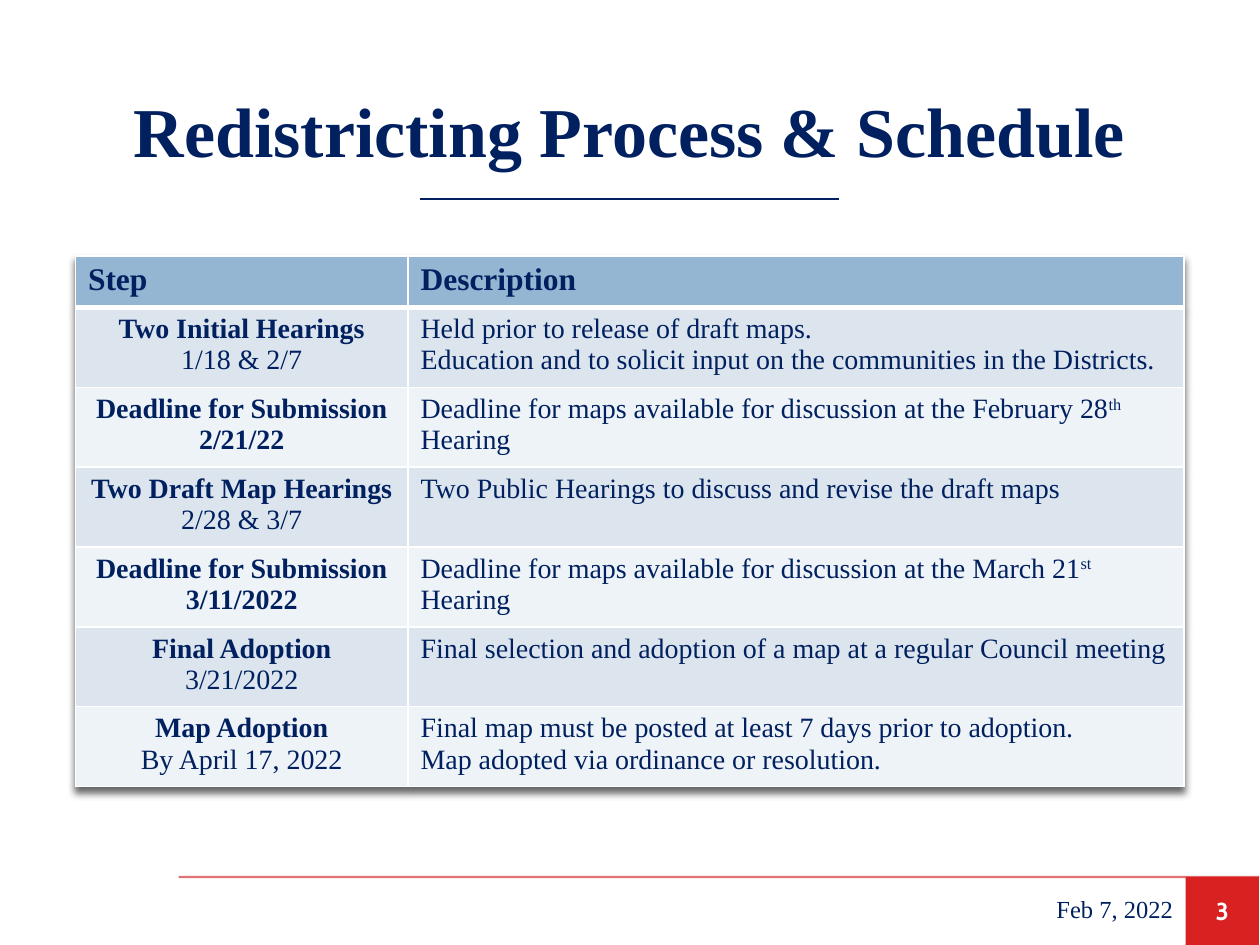
import pptx
import pptx.util
import pptx.dml.color
import pptx.enum.shapes
import pptx.enum.text
import pptx.oxml
import pptx.oxml.ns
import lxml.etree

Cm = pptx.util.Cm
Pt = pptx.util.Pt
RGB = pptx.dml.color.RGBColor
ALIGN = pptx.enum.text.PP_ALIGN
MID = pptx.enum.text.MSO_ANCHOR.MIDDLE
qn = pptx.oxml.ns.qn

NAVY = RGB(0x00, 0x20, 0x60)
WHITE = RGB(0xFF, 0xFF, 0xFF)
RED = RGB(0xD9, 0x21, 0x21)
RULE = RGB(0xC8, 0x00, 0x00)
HEAD = RGB(0x94, 0xB6, 0xD2)
BANDS = [RGB(0xDC, 0xE5, 0xEE), RGB(0xEE, 0xF3, 0xF7)]
SERIF = "Times New Roman"

STEPS = [
    ("Two Initial Hearings", "1/18 & 2/7", False,
     [["Held prior to release of draft maps."],
      ["Education and to solicit input on the communities in the Districts."]]),
    ("Deadline for Submission", "2/21/22", True,
     [["Deadline for maps available for discussion at the February 28", "th", " Hearing"]]),
    ("Two Draft Map Hearings", "2/28 & 3/7", False,
     [["Two Public Hearings to discuss and revise the draft maps"]]),
    ("Deadline for Submission", "3/11/2022", True,
     [["Deadline for maps available for discussion at the March 21", "st", " Hearing"]]),
    ("Final Adoption", "3/21/2022", False,
     [["Final selection and adoption of a map at a regular Council meeting"]]),
    ("Map Adoption", "By April 17, 2022", False,
     [["Final map must be posted at least 7 days prior to adoption."],
      ["Map adopted via ordinance or resolution."]]),
]


def add_run(para, text, size, bold=False, color=NAVY, face=SERIF):
    run = para.add_run()
    run.text = text
    font = run.font
    font.size, font.bold, font.name = Pt(size), bold, face
    font.color.rgb = color
    return run


def add_para(frame, first, align):
    para = frame.paragraphs[0] if first else frame.add_paragraph()
    para.alignment = align
    return para


def add_rule(slide, left, top, width, color, weight):
    line = slide.shapes.add_connector(
        pptx.enum.shapes.MSO_CONNECTOR.STRAIGHT,
        Cm(left), Cm(top), Cm(left + width), Cm(top))
    line.line.color.rgb = color
    line.line.width = Pt(weight)
    lxml.etree.SubElement(line._element.spPr, qn("a:effectLst"))
    return line


def add_title(slide, left, top, width, height):
    title = slide.shapes.title
    title.left, title.top, title.width, title.height = map(Cm, (left, top, width, height))
    frame = title.text_frame
    frame.word_wrap = True
    frame.vertical_anchor = MID
    add_run(add_para(frame, True, ALIGN.CENTER), "Redistricting Process & Schedule", 40, True)
    add_rule(slide, left + 7.52, top + height + 0.03, 8.46, NAVY, 0.75)


def style_cell(cell, color, top, base):
    props = cell._tc.get_or_add_tcPr()
    for side, weight in (("L", 1), ("R", 1), ("T", top), ("B", base)):
        edge = lxml.etree.SubElement(props, qn("a:ln" + side), w=str(Pt(weight)))
        fill = lxml.etree.SubElement(edge, qn("a:solidFill"))
        lxml.etree.SubElement(fill, qn("a:srgbClr"), val=str(WHITE))
    cell.fill.solid()
    cell.fill.fore_color.rgb = color


def add_shade(table):
    props = table._tbl.tblPr
    list_ = lxml.etree.Element(qn("a:effectLst"))
    shade = lxml.etree.SubElement(list_, qn("a:outerShdw"), blurRad="50800",
                                  dist="38100", dir="5400000", rotWithShape="0")
    tint = lxml.etree.SubElement(shade, qn("a:srgbClr"), val="000000")
    lxml.etree.SubElement(tint, qn("a:alpha"), val="60000")
    props.insert(0, list_)


def add_steps(slide, left, top, width, height):
    table = slide.shapes.add_table(len(STEPS) + 1, 2, Cm(left), Cm(top),
                                   Cm(width), Cm(height)).table
    add_shade(table)
    for col, part in zip(table.columns, (0.3, 0.7)):
        col.width = Cm(width * part)
    head = 1.04
    table.rows[0].height = Cm(head)
    for col, text in enumerate(("Step", "Description")):
        cell = table.cell(0, col)
        style_cell(cell, HEAD, 1, 3)
        add_run(add_para(cell.text_frame, True, ALIGN.LEFT), text, 18, True)
    for row, (name, date, bold, notes) in enumerate(STEPS, 1):
        table.rows[row].height = Cm((height - head) / len(STEPS))
        step, desc = table.cell(row, 0), table.cell(row, 1)
        for cell in (step, desc):
            style_cell(cell, BANDS[(row - 1) % 2], 3 if row == 1 else 1, 1)
        add_run(add_para(step.text_frame, True, ALIGN.CENTER), name, 16, True)
        add_run(add_para(step.text_frame, False, ALIGN.CENTER), date, 16, bold)
        for num, parts in enumerate(notes):
            para = add_para(desc.text_frame, num == 0, ALIGN.LEFT)
            for spot, text in enumerate(parts):
                run = add_run(para, text, 16)
                if spot == 1:
                    run._r.get_or_add_rPr().set("baseline", "30000")


def add_footer(slide, left, top, width, height):
    rule = add_rule(slide, left, top, width, RULE, 1.25)
    tint = rule._element.spPr.find(".//" + qn("a:srgbClr"))
    lxml.etree.SubElement(tint, qn("a:alpha"), val="55000")
    side = 1.48
    edge = left + width - side
    page = slide.shapes.add_shape(pptx.enum.shapes.MSO_SHAPE.RECTANGLE,
                                  Cm(edge), Cm(top), Cm(side), Cm(height))
    page.shadow.inherit = False
    page.fill.solid()
    page.fill.fore_color.rgb = RED
    page.line.fill.background()
    page.text_frame.vertical_anchor = MID
    add_run(add_para(page.text_frame, True, ALIGN.CENTER), "3", 14, True, WHITE, "Cabin")
    date = slide.shapes.add_textbox(Cm(edge - 7.42), Cm(top + 0.13), Cm(7.42), Cm(1.02))
    date.text_frame.word_wrap = True
    date.text_frame.vertical_anchor = MID
    add_run(add_para(date.text_frame, True, ALIGN.RIGHT), "Feb 7, 2022", 14)


def main():
    deck = pptx.Presentation()
    deck.slide_width, deck.slide_height = Cm(25.4), Cm(19.05)
    slide = deck.slides.add_slide(deck.slide_layouts[5])
    add_footer(slide, 3.6, 17.68, 21.78, 1.37)
    add_title(slide, 0.94, 1.24, 23.5, 2.74)
    add_steps(slide, 1.52, 5.16, 22.35, 10.1)
    deck.save("out.pptx")


if __name__ == "__main__":
    main()
